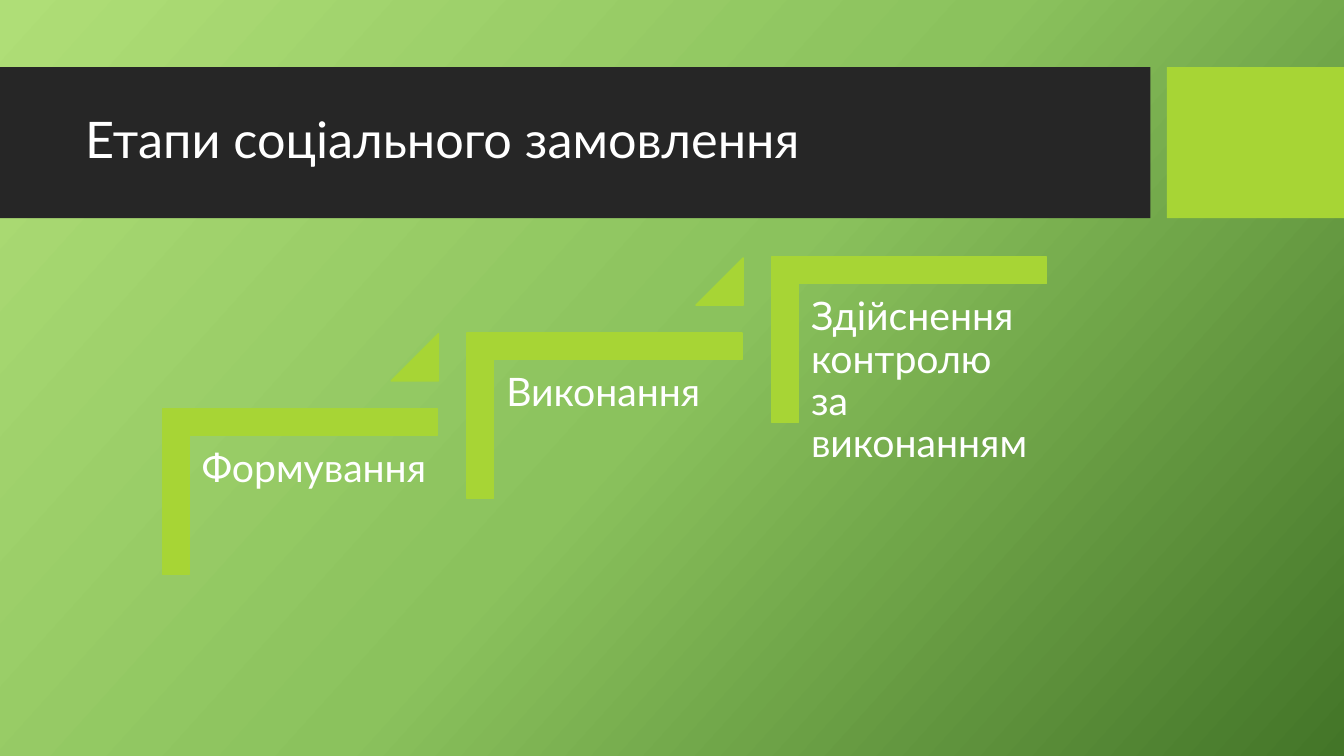
from copy import deepcopy

from pptx import Presentation
from pptx.dml.color import RGBColor
from pptx.enum.shapes import MSO_SHAPE
from pptx.enum.text import MSO_ANCHOR, MSO_AUTO_SIZE, PP_ALIGN
from pptx.oxml.ns import qn
from pptx.util import Cm, Pt

LIME = RGBColor(0xA7, 0xD5, 0x35)
CHARCOAL = RGBColor(0x26, 0x26, 0x26)
WHITE = RGBColor(0xFF, 0xFF, 0xFF)
GRADIENT = [
    (0, RGBColor(0xAF, 0xDE, 0x77)),
    (0.5, RGBColor(0x8B, 0xC2, 0x5D)),
    (1, RGBColor(0x43, 0x75, 0x28)),
]

STAGES = ["Формування", "Виконання", "Здійснення контролю за виконанням"]
STEP_WIDTH = 7.68
STEP_RISE = 1.91


class StageSlide:
    font_name = "Lato"

    def __init__(self, deck):
        self.slide = deck.slides.add_slide(deck.slide_layouts[5])
        self.shapes = self.slide.shapes

    def background(self, stops, angle):
        fill = self.slide.background.fill
        fill.gradient()
        fill.gradient_angle = angle
        stop_list = self.slide.element.find(".//" + qn("a:gsLst"))
        stop_list.append(deepcopy(stop_list[-1]))
        for stop, (position, color) in zip(fill.gradient_stops, stops):
            stop.position = position
            stop.color.rgb = color

    def shape(self, parent, kind, place, color, outlined=False, adjustments=(), rotation=0):
        shape = parent.add_shape(kind, *map(Cm, place))
        shape.shadow.inherit = False
        shape.fill.solid()
        shape.fill.fore_color.rgb = color
        if outlined:
            shape.line.color.rgb = color
            shape.line.width = Pt(1)
        else:
            shape.line.fill.background()
        for index, value in enumerate(adjustments):
            shape.adjustments[index] = value
        shape.rotation = rotation

    def text(self, frame, wording, size):
        frame.word_wrap = True
        frame.auto_size = MSO_AUTO_SIZE.NONE
        paragraph = frame.paragraphs[0]
        paragraph.text = wording
        paragraph.alignment = PP_ALIGN.LEFT
        paragraph.line_spacing = 0.9
        paragraph.font.name = self.font_name
        paragraph.font.size = Pt(size)
        paragraph.font.color.rgb = WHITE

    def title(self, wording, place):
        title = self.shapes.title
        title.left, title.top, title.width, title.height = map(Cm, place)
        title.text_frame.vertical_anchor = MSO_ANCHOR.MIDDLE
        self.text(title.text_frame, wording, 36)
        # Bring the title in front of its band
        title.element.getparent().append(title.element)

    def label(self, parent, wording, place):
        frame = parent.add_textbox(*map(Cm, place)).text_frame
        frame.margin_left = frame.margin_right = Cm(0.3)
        frame.margin_top = frame.margin_bottom = Cm(0.3)
        self.text(frame, wording, 28)

    def staircase(self, stages):
        group = self.shapes.add_group_shape().shapes
        for index, stage in enumerate(stages):
            x = index * STEP_WIDTH
            y = -index * STEP_RISE
            self.shape(group, MSO_SHAPE.CORNER, (5.47 + x, 8.92 + y, 4.17, 6.93),
                       LIME, True, (0.161, 0.161), 90)
            self.label(group, stage, (4.78 + x, 11 + y, 6.27, 5.49))
            if index < len(stages) - 1:
                self.shape(group, MSO_SHAPE.ISOSCELES_TRIANGLE,
                           (9.86 + x, 8.41 + y, 1.19, 1.19), LIME, True, (1,))


def main():
    deck = Presentation()
    deck.slide_width = Cm(33.87)
    deck.slide_height = Cm(19.05)
    page = StageSlide(deck)
    page.background(GRADIENT, 318)

    # Title band
    page.shape(page.shapes, MSO_SHAPE.RECTANGLE, (0, 1.69, 28.99, 3.81), CHARCOAL)
    page.shape(page.shapes, MSO_SHAPE.RECTANGLE, (29.41, 1.69, 4.46, 3.81), LIME)
    page.title("Етапи соціального замовлення", (1.89, 2.08, 26.7, 3))

    # Rising stages
    page.staircase(STAGES)
    deck.save("out.pptx")


if __name__ == "__main__":
    main()
